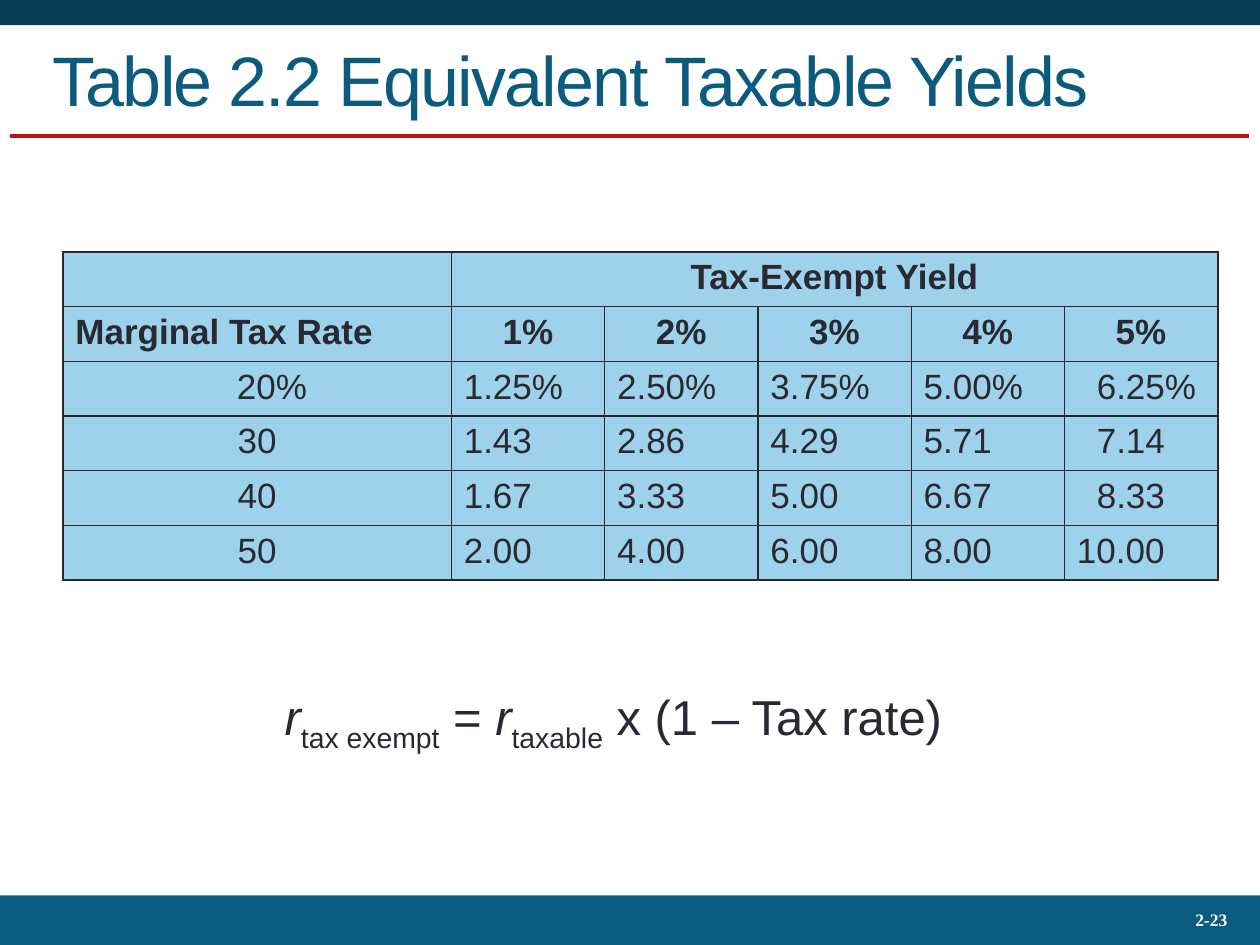
from lxml import etree
from pptx import Presentation
from pptx.dml.color import RGBColor
from pptx.enum.shapes import MSO_CONNECTOR, MSO_SHAPE
from pptx.enum.text import MSO_ANCHOR, PP_ALIGN
from pptx.oxml.ns import qn
from pptx.util import Cm, Pt

LEFT, CENTER, RIGHT = PP_ALIGN.LEFT, PP_ALIGN.CENTER, PP_ALIGN.RIGHT
TOP, MIDDLE = MSO_ANCHOR.TOP, MSO_ANCHOR.MIDDLE
RECTANGLE, STRAIGHT = MSO_SHAPE.RECTANGLE, MSO_CONNECTOR.STRAIGHT

NAVY, BLUE, RED = "073D55", "0B5B7F", "BD130F"
SKY, INK, WHITE = "9ED1EA", "292934", "FFFFFF"

TITLE_FORMAT = {"name": "Arial", "size": Pt(40)}
NUMBER_FORMAT = {"name": "Times New Roman", "size": Pt(10), "bold": True}
FORMULA_FORMAT = {"name": "Arial", "size": Pt(28)}
HEADER_FORMAT = {"name": "Arial", "size": Pt(20), "bold": True}
BODY_FORMAT = {**HEADER_FORMAT, "bold": False}

TAX_RATES = ["20%", "30", "40", "50"]
YIELDS = [
    ["1.25%", "2.50%", "3.75%", "5.00%", "6.25%"],
    ["1.43", "2.86", "4.29", "5.71", "7.14"],
    ["1.67", "3.33", "5.00", "6.67", "8.33"],
    ["2.00", "4.00", "6.00", "8.00", "10.00"],
]
FORMULA = [
    ("r", "variable"),
    ("tax exempt", "subscript"),
    (" = ", "plain"),
    ("r", "variable"),
    ("taxable", "subscript"),
    (" x (1 – Tax rate)", "plain"),
]


def color(value):
    return RGBColor.from_string(value)


def add_run(paragraph, text, format_values, fill):
    run = paragraph.add_run()
    run.text = text
    for name, value in format_values.items():
        setattr(run.font, name, value)
    run.font.color.rgb = color(fill)
    return run


def add_band(slide, top, height, fill):
    shape = slide.shapes.add_shape(RECTANGLE, 0, Cm(top), Cm(25.4), Cm(height))
    shape.shadow.inherit = False
    shape.fill.solid()
    shape.fill.fore_color.rgb = color(fill)
    shape.line.fill.background()


def add_rule(slide, left, right, top):
    rule = slide.shapes.add_connector(STRAIGHT, Cm(left), Cm(top), Cm(right), Cm(top))
    rule.line.color.rgb = color(RED)
    rule.line.width = Pt(2.25)
    etree.SubElement(rule.element.spPr, qn("a:effectLst"))


def add_text_box(slide, left, top, width, height, anchor, alignment):
    box = slide.shapes.add_textbox(Cm(left), Cm(top), Cm(width), Cm(height))
    box.text_frame.word_wrap = True
    box.text_frame.vertical_anchor = anchor
    paragraph = box.text_frame.paragraphs[0]
    paragraph.alignment = alignment
    return paragraph


def add_title(slide):
    paragraph = add_text_box(slide, 0.81, 0.43, 23.8, 2.31, MIDDLE, LEFT)
    run = add_run(paragraph, "Table 2.2 Equivalent Taxable Yields", TITLE_FORMAT, BLUE)
    run.font._element.set("spc", "-100")


def add_formula(slide):
    paragraph = add_text_box(slide, 5.49, 13.72, 14.6, 1.45, TOP, LEFT)
    for text, role in FORMULA:
        run = add_run(paragraph, text, FORMULA_FORMAT, INK)
        run.font.italic = role == "variable"
        if role == "subscript":
            run.font._element.set("baseline", "-25000")


def add_borders(cell):
    properties = cell._tc.get_or_add_tcPr()
    for side in ("lnL", "lnR", "lnT", "lnB"):
        line = etree.SubElement(properties, qn(f"a:{side}"), w=str(Pt(1)))
        fill = etree.SubElement(line, qn("a:solidFill"))
        etree.SubElement(fill, qn("a:srgbClr"), val=INK)


def write_cell(cell, text, format_values, alignment, indent=0):
    paragraph = cell.text_frame.paragraphs[0]
    paragraph.alignment = alignment
    cell.margin_left = Cm(0.25 + indent)
    add_run(paragraph, text, format_values, INK)


def add_yield_table(slide):
    row_count, column_count = len(TAX_RATES) + 2, len(YIELDS[0]) + 1
    frame = slide.shapes.add_table(
        row_count, column_count, Cm(1.27), Cm(5.08), Cm(23.3), Cm(6.6)
    )
    table = frame.table
    for index, column in enumerate(table.columns):
        column.width = Cm(3.09 if index else 7.83)
    for row in table.rows:
        row.height = Cm(1.1)
    for cell in table.iter_cells():
        add_borders(cell)
        cell.fill.solid()
        cell.fill.fore_color.rgb = color(SKY)

    table.cell(0, 1).merge(table.cell(0, column_count - 1))
    write_cell(table.cell(0, 1), "Tax-Exempt Yield", HEADER_FORMAT, CENTER)
    write_cell(table.cell(1, 0), "Marginal Tax Rate", HEADER_FORMAT, LEFT)
    for column in range(1, column_count):
        write_cell(table.cell(1, column), f"{column}%", HEADER_FORMAT, CENTER)

    for row, (rate, values) in enumerate(zip(TAX_RATES, YIELDS), start=2):
        rate_indent = 0.6 if rate.endswith("%") else 0
        write_cell(table.cell(row, 0), rate, BODY_FORMAT, CENTER, rate_indent)
        for column, value in enumerate(values, start=1):
            aligned = column == len(values) and value.index(".") == 1
            indent = 0.4 if aligned else 0
            write_cell(table.cell(row, column), value, BODY_FORMAT, LEFT, indent)


def add_slide_number(slide):
    paragraph = add_text_box(slide, 22.02, 18.11, 2.97, 0.91, MIDDLE, RIGHT)
    paragraph.line_spacing = 0.93
    add_run(paragraph, "2-23", NUMBER_FORMAT, WHITE)


def main():
    presentation = Presentation()
    presentation.slide_width = Cm(25.4)
    presentation.slide_height = Cm(19.05)
    slide = presentation.slides.add_slide(presentation.slide_layouts[6])
    add_band(slide, 0, 0.51, NAVY)
    add_rule(slide, 0.2, 25.17, 2.74)
    add_band(slide, 18.05, 1, BLUE)
    add_slide_number(slide)
    add_title(slide)
    add_formula(slide)
    add_yield_table(slide)
    presentation.save("out.pptx")


if __name__ == "__main__":
    main()
